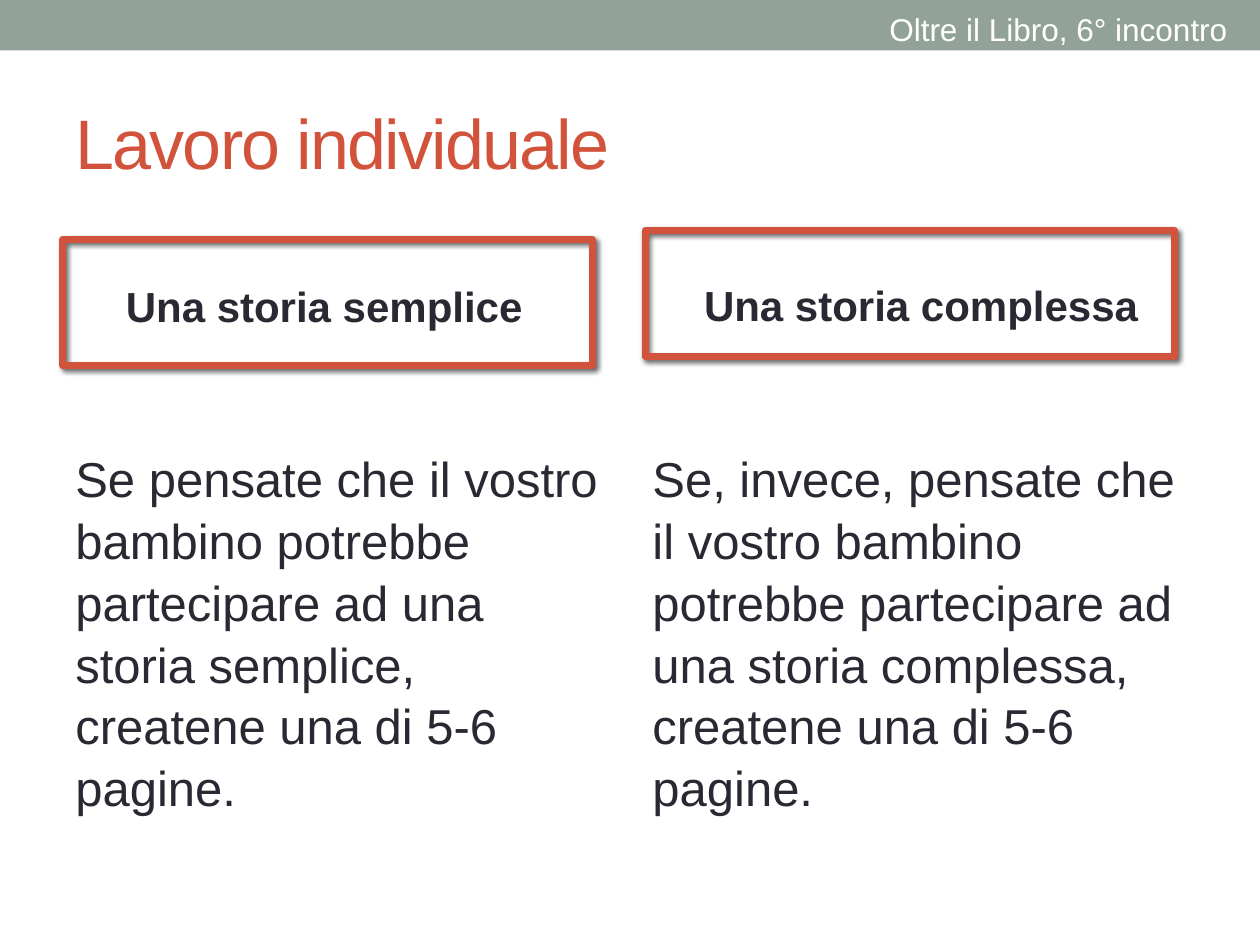
from dataclasses import dataclass

from lxml import etree
from pptx import Presentation
from pptx.dml.color import RGBColor
from pptx.enum.shapes import MSO_SHAPE
from pptx.enum.text import MSO_ANCHOR, PP_ALIGN
from pptx.oxml import parse_xml
from pptx.util import Inches, Pt

RECTANGLE = MSO_SHAPE.RECTANGLE
LEFT, CENTER = PP_ALIGN.LEFT, PP_ALIGN.CENTER
TOP, MIDDLE = MSO_ANCHOR.TOP, MSO_ANCHOR.MIDDLE

SHADOW_XML = (
    '<a:effectLst xmlns:a="http://schemas.openxmlformats.org/drawingml/2006/main">'
    '<a:outerShdw blurRad="{blur}" dist="{distance}" dir="2700000" algn="tl" rotWithShape="0">'
    '<a:srgbClr val="000000"><a:alpha val="60000"/></a:srgbClr>'
    "</a:outerShdw></a:effectLst>"
)


@dataclass(frozen=True)
class Theme:
    font: str = "Arial"
    band: RGBColor = RGBColor(0x93, 0xA2, 0x99)
    accent: RGBColor = RGBColor(0xD2, 0x53, 0x3C)
    ink: RGBColor = RGBColor(0x29, 0x29, 0x34)
    white: RGBColor = RGBColor(0xFF, 0xFF, 0xFF)
    title_size: int = 40
    body_size: int = 28
    heading_size: int = 24
    meeting_size: int = 18
    frame_width: int = 4


THEME = Theme()

# Each story: heading, frame box, heading box, heading wraps, body box, body.
STORIES = [
    ("Una storia semplice", (0.5, 1.9, 4.2, 1), (0.9, 2.18, 3.38, 0.5), False,
     (0.5, 3.49, 4.42, 3.5),
     "Se pensate che il vostro bambino potrebbe partecipare ad una storia "
     "semplice, createne una di 5-6 pagine."),
    ("Una storia complessa", (5.12, 1.83, 4.2, 1), (5.3, 2.17, 4.02, 0.5), True,
     (5.08, 3.49, 4.42, 3.5),
     "Se, invece, pensate che il vostro bambino potrebbe partecipare ad una "
     "storia complessa, createne una di 5-6 pagine."),
]


def add_text(slide, box, text, size, color, bold=False, align=LEFT,
             anchor=TOP, wrap=True, line_spacing=None):
    """Add one paragraph in a text box and return its run."""
    frame = slide.shapes.add_textbox(*map(Inches, box)).text_frame
    frame.word_wrap = wrap
    frame.vertical_anchor = anchor
    paragraph = frame.paragraphs[0]
    paragraph.alignment = align
    paragraph.line_spacing = line_spacing
    run = paragraph.add_run()
    run.text = text
    font_format = {"name": THEME.font, "size": Pt(size), "bold": bold}
    for attribute, value in font_format.items():
        setattr(run.font, attribute, value)
    run.font.color.rgb = color
    return run


def add_band(slide, box):
    band = slide.shapes.add_shape(RECTANGLE, *map(Inches, box))
    band.shadow.inherit = False
    band.fill.solid()
    band.fill.fore_color.rgb = THEME.band
    band.line.fill.background()


def add_meeting(slide, box):
    add_text(slide, box, "Oltre il Libro, 6° incontro",
             THEME.meeting_size, THEME.white, wrap=False)


def add_title(slide, box):
    title = add_text(slide, box, "Lavoro individuale", THEME.title_size,
                     THEME.accent, anchor=MIDDLE)
    title.font._element.set("spc", "-100")


def add_frame(slide, box):
    """Add an outlined box with a soft shadow and no fill."""
    frame = slide.shapes.add_shape(RECTANGLE, *map(Inches, box))
    frame.fill.background()
    frame.line.color.rgb = THEME.accent
    frame.line.width = Pt(THEME.frame_width)
    etree.SubElement(frame.line._get_or_add_ln(),
                     "{http://schemas.openxmlformats.org/drawingml/2006/main}round")
    shadow = SHADOW_XML.format(blur=Pt(3), distance=Pt(2))
    frame._element.spPr.append(parse_xml(shadow))


def add_story(slide, heading, frame_box, heading_box, wraps, body_box, body):
    add_text(slide, body_box, body, THEME.body_size, THEME.ink, line_spacing=1.05)
    add_frame(slide, frame_box)
    add_text(slide, heading_box, heading, THEME.heading_size, THEME.ink,
             bold=True, align=CENTER if wraps else LEFT, wrap=wraps)


def main():
    deck = Presentation()
    deck.slide_width, deck.slide_height = Inches(10), Inches(7.5)
    slide = deck.slides.add_slide(deck.slide_layouts[6])
    add_band(slide, (0, 0, 10, 0.4))
    add_title(slide, (0.5, 0.58, 9, 1.08))
    add_meeting(slide, (6.96, 0.03, 2.91, 0.4))
    for story in STORIES:
        add_story(slide, *story)
    deck.save("out.pptx")


if __name__ == "__main__":
    main()
